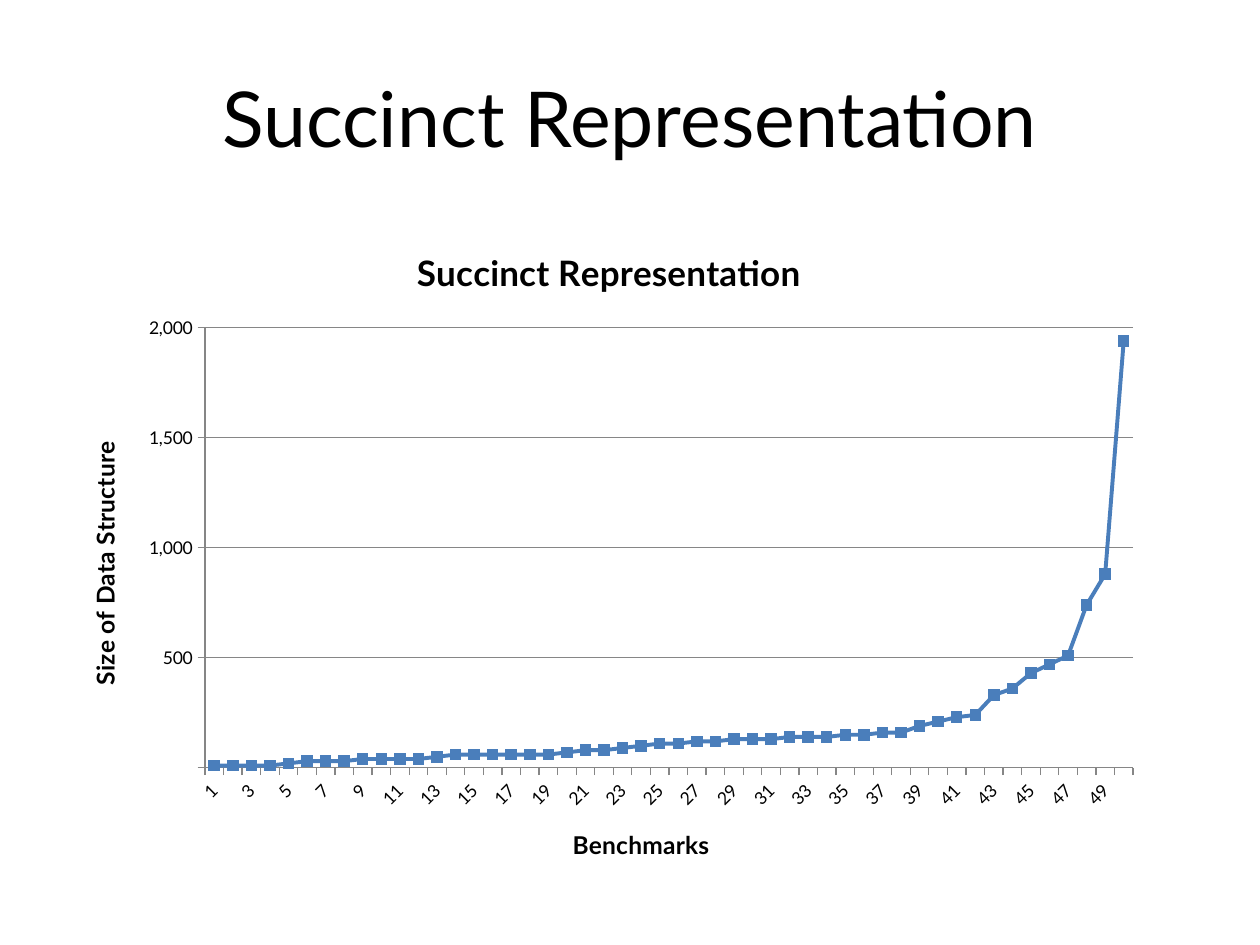
from dataclasses import dataclass

from lxml import etree
from pptx import Presentation
from pptx.chart.data import CategoryChartData
from pptx.dml.color import RGBColor
from pptx.enum import chart as kinds, text
from pptx.oxml.ns import qn
from pptx.util import Pt

PX = 914400 / 126


@dataclass(frozen=True)
class Theme:
    font: str = "Lato"
    ink: str = "000000"
    grid: str = "868686"
    line: str = "4A7EBB"
    mark: str = "4F81BD"
    head: int = 44
    title: int = 20
    axis: int = 14
    tick: int = 10


LOOK = Theme()
SIZES = [
    10, 10, 10, 10, 20, 30, 30, 30, 40, 40,
    40, 40, 50, 60, 60, 60, 60, 60, 60, 70,
    80, 80, 90, 100, 110, 110, 120, 120, 130, 130,
    130, 140, 140, 140, 150, 150, 160, 160, 190, 210,
    230, 240, 330, 360, 430, 470, 510, 740, 880, 1940,
]


def px(count):
    return round(count * PX)


def style(font, size, bold=False):
    font.name = LOOK.font
    font.size = Pt(size)
    font.bold = bold
    font.color.rgb = RGBColor.from_string(LOOK.ink)


def stroke(line, color, width):
    line.color.rgb = RGBColor.from_string(color)
    line.width = Pt(width)


def label(frame, words, size, bold=False):
    frame.text = words
    para = frame.paragraphs[0]
    para.alignment = text.PP_ALIGN.CENTER
    style(para.runs[0].font, size, bold)


def turn(node, angle):
    node.find(".//" + qn("a:bodyPr")).set("rot", str(angle * 60000))


def set_head(slide, words):
    head = slide.shapes.title
    head.left, head.top, head.width, head.height = map(px, (63, 38, 1134, 157))
    head.text_frame.vertical_anchor = text.MSO_ANCHOR.MIDDLE
    label(head.text_frame, words, LOOK.head)


def set_plot(chart, x, y, w, h):
    """Fix the inner plot area, in fractions of the chart."""
    area = chart.element.find(".//" + qn("c:plotArea"))
    for old in area.findall(qn("c:layout")):
        area.remove(old)
    layout = etree.Element(qn("c:layout"))
    area.insert(0, layout)
    manual = etree.SubElement(layout, qn("c:manualLayout"))
    parts = dict(layoutTarget="inner", xMode="edge", yMode="edge",
                 x=x, y=y, w=w, h=h)
    for tag, val in parts.items():
        etree.SubElement(manual, qn("c:" + tag)).set("val", str(val))


def set_axis(axis, words):
    axis.has_title = True
    label(axis.axis_title.text_frame, words, LOOK.axis, True)
    axis.major_tick_mark = kinds.XL_TICK_MARK.OUTSIDE
    axis.minor_tick_mark = kinds.XL_TICK_MARK.NONE
    style(axis.tick_labels.font, LOOK.tick)
    stroke(axis.format.line, LOOK.grid, 0.75)


def add_plot(slide):
    data = CategoryChartData()
    data.categories = [str(n) for n in range(1, len(SIZES) + 1)]
    data.add_series("Series 1", SIZES)
    chart = slide.shapes.add_chart(
        kinds.XL_CHART_TYPE.LINE_MARKERS,
        *map(px, (63, 221, 1092, 667)), data).chart
    style(chart.font, LOOK.tick)
    chart.has_legend = False
    chart.has_title = True
    label(chart.chart_title.text_frame, "Succinct Representation",
          LOOK.title, True)
    set_plot(chart, 0.13, 0.16, 0.85, 0.66)

    # Axes
    cat, val = chart.category_axis, chart.value_axis
    set_axis(cat, "Benchmarks")
    set_axis(val, "Size of Data Structure")
    turn(cat._element.find(qn("c:txPr")), -45)
    turn(val._element.find(qn("c:title")), -90)
    val.minimum_scale, val.maximum_scale, val.major_unit = 0, 2000, 500
    val.tick_labels.number_format = r"#,##0;\-#,##0;;"
    val.tick_labels.number_format_is_linked = False
    val.has_major_gridlines = True
    stroke(val.major_gridlines.format.line, LOOK.grid, 0.75)

    # Line and markers
    plot = chart.plots[0]
    plot.vary_by_categories = False
    row = plot.series[0]
    row.smooth = False
    stroke(row.format.line, LOOK.line, 2.25)
    mark = row.marker
    mark.style = kinds.XL_MARKER_STYLE.SQUARE
    mark.size = 6
    mark.format.fill.solid()
    mark.format.fill.fore_color.rgb = RGBColor.from_string(LOOK.mark)
    stroke(mark.format.line, LOOK.line, 0.75)


def main():
    deck = Presentation()
    deck.slide_width, deck.slide_height = px(1260), px(945)
    slide = deck.slides.add_slide(deck.slide_layouts[5])
    set_head(slide, "Succinct Representation")
    add_plot(slide)
    deck.save("out.pptx")


if __name__ == "__main__":
    main()
